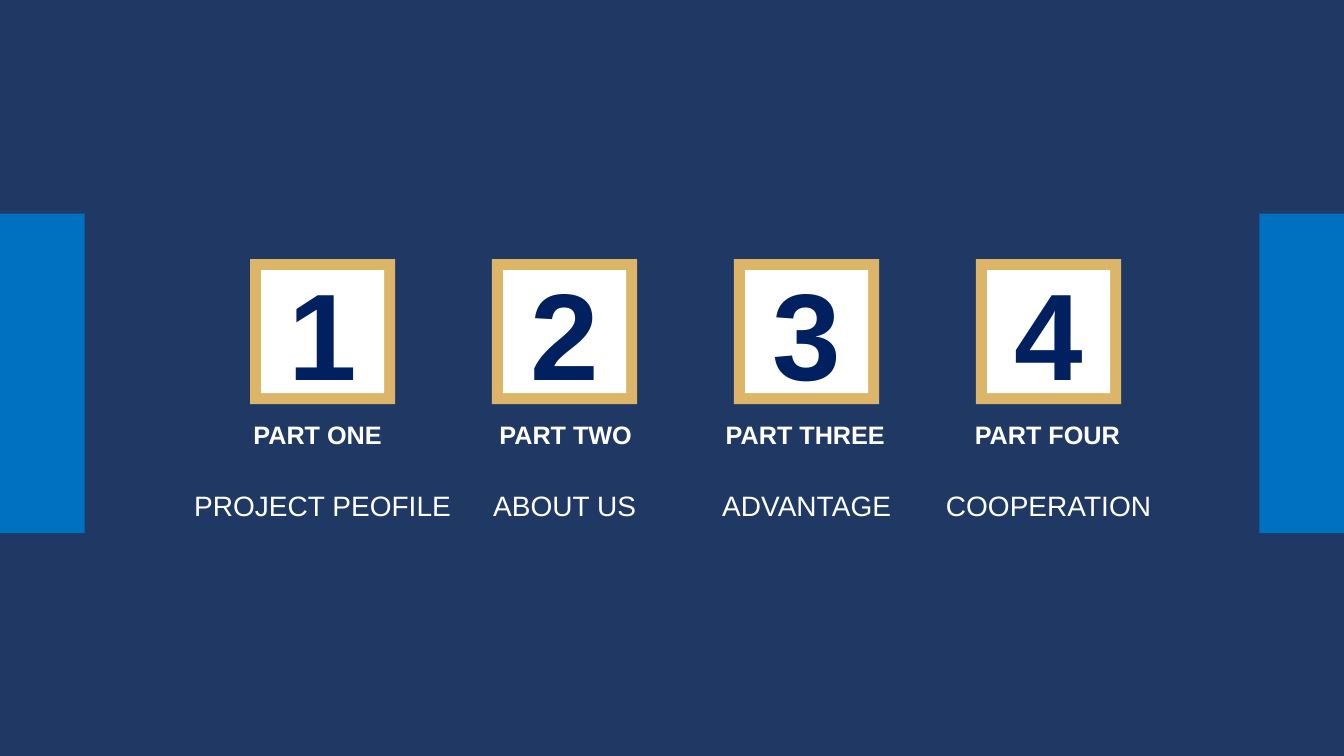
"""Contents slide with four numbered parts on a navy ground."""
from pptx import Presentation
from pptx.dml.color import RGBColor
from pptx.enum.shapes import MSO_SHAPE as SHAPE
from pptx.enum.text import MSO_ANCHOR as ANCHOR, MSO_AUTO_SIZE as FIT, PP_ALIGN as ALIGN
from pptx.util import Inches, Pt

NAVY = RGBColor(0x20, 0x38, 0x64)
BLUE = RGBColor(0x00, 0x70, 0xC0)
GOLD = RGBColor(0xDC, 0xB5, 0x69)
WHITE = RGBColor(0xFF, 0xFF, 0xFF)
INK = RGBColor(0x00, 0x20, 0x60)

WIDTH, HEIGHT = 13.33, 7.5
BAND_W, BAND_H, BAND_TOP = 0.84, 3.17, 2.12
FIRST_CENTRE, PITCH = 3.2, 2.4
TILE, FACE, TILE_MIDDLE = 1.44, 1.22, 3.29
PART_TOP, TOPIC_TOP = 4.11, 4.8

PARTS = [
    ("PART ONE", 3.16, 1.49, "PROJECT PEOFILE", 2.77),
    ("PART TWO", 5.62, 1.53, "ABOUT US", 1.63),
    ("PART THREE", 8.0, 1.8, "ADVANTAGE", 1.89),
    ("PART FOUR", 10.4, 1.66, "COOPERATION", 2.26),
]

prs = Presentation()
prs.slide_width, prs.slide_height = Inches(WIDTH), Inches(HEIGHT)
s = prs.slides.add_slide(prs.slide_layouts[6])
s.background.fill.solid()
s.background.fill.fore_color.rgb = NAVY


def add_rect(left, top, width, height, color):
    sp = s.shapes.add_shape(SHAPE.RECTANGLE, Inches(left), Inches(top), Inches(width), Inches(height))
    sp.shadow.inherit = False
    sp.fill.solid()
    sp.fill.fore_color.rgb = color
    sp.line.fill.background()
    return sp


def add_text(tf, text, size, color, bold, align):
    p = tf.paragraphs[0]
    p.alignment = align
    r = p.add_run()
    r.text = text
    r.font.name, r.font.size, r.font.bold = "Arial", Pt(size), bold
    r.font.color.rgb = color


for left in (0, WIDTH - BAND_W):
    add_rect(left, BAND_TOP, BAND_W, BAND_H, BLUE)

for i, (part, part_centre, part_w, topic, topic_w) in enumerate(PARTS):
    centre = FIRST_CENTRE + i * PITCH
    add_rect(centre - TILE / 2, TILE_MIDDLE - TILE / 2, TILE, TILE, GOLD)
    face = add_rect(centre - FACE / 2, TILE_MIDDLE - FACE / 2, FACE, FACE, WHITE)
    face.text_frame.vertical_anchor = ANCHOR.MIDDLE
    add_text(face.text_frame, str(i + 1), 88, INK, True, ALIGN.CENTER)

    labels = [
        (part, part_centre, PART_TOP, part_w, 0.4, 18, True, ALIGN.LEFT),
        (topic, centre, TOPIC_TOP, topic_w, 0.44, 20, False, ALIGN.CENTER),
    ]
    for text, middle, top, width, height, size, bold, align in labels:
        box = s.shapes.add_textbox(Inches(middle - width / 2), Inches(top), Inches(width), Inches(height))
        tf = box.text_frame
        tf.word_wrap = False
        tf.auto_size = FIT.SHAPE_TO_FIT_TEXT
        add_text(tf, text, size, WHITE, bold, align)

prs.save("out.pptx")
